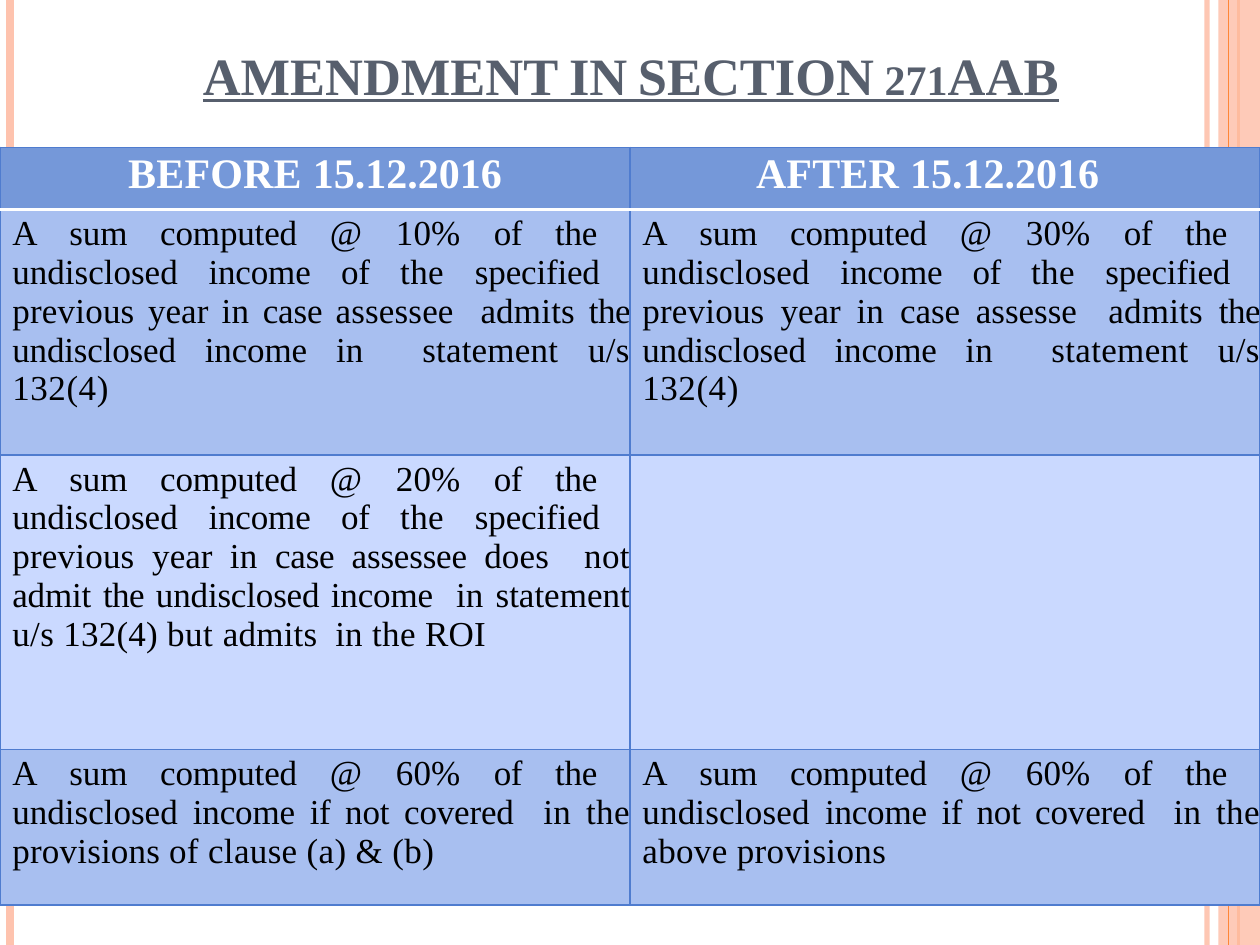
from lxml import etree
from pptx import Presentation
from pptx.dml.color import RGBColor
from pptx.enum.shapes import MSO_CONNECTOR, MSO_SHAPE
from pptx.enum.text import MSO_ANCHOR, PP_ALIGN
from pptx.oxml.ns import qn
from pptx.util import Cm, Pt

STRAIGHT, RECTANGLE = MSO_CONNECTOR.STRAIGHT, MSO_SHAPE.RECTANGLE
BOTTOM = MSO_ANCHOR.BOTTOM
LEFT, CENTER, JUSTIFY = PP_ALIGN.LEFT, PP_ALIGN.CENTER, PP_ALIGN.JUSTIFY

FONT = "Times New Roman"
WIDTH, HEIGHT = 25.4, 19.05
COLORS = {
    "peach": "FEC3AE", "orange": "FE8637", "title": "575F6D",
    "header": "7598D9", "dark band": "A8BFF0", "light band": "CAD9FF",
    "border": "4F7CCF", "white": "FFFFFF", "black": "000000",
}

TITLE = "AMENDMENT IN SECTION 271AAB"


# Text pieces with their letter spacing in points
def opening(rate, undisclosed_spacing=0):
    return [("A ", 0.2), ("sum computed ", -0.1), ("@ ", 0.2), (rate + " ", 0.1),
            ("of ", -0.3), ("the  ", -0.1), ("undisclosed ", undisclosed_spacing),
            ("income ", -0.1)]


SPECIFIED_YEAR = [("of ", -0.2), ("the ", 0.2), ("specified  ", -0.1),
                  ("previous ", 0.1), ("year ", 0), ("in ", 0.1)]
NOT_COVERED = [("if ", -0.3), ("not covered  ", -0.1), ("in ", 0.1)]
ADMITS_INCOME = [("admits ", 0.1), ("the ", -0.3), ("undisclosed income ", -0.1)]

HEADERS = [
    ([("BEFORE ", 0.1), ("15.12.2016", 0)], CENTER, 0),
    ([("AFTER ", 0.1), ("15.12.2016", 0)], LEFT, 2.54),
]
RULES = [
    [opening("10%") + SPECIFIED_YEAR + [("case ", -0.1), ("assessee  ", 0.1)]
     + ADMITS_INCOME + [("in  statement ", 0.1), ("u/s ", 0.2), ("132(4)", 0.3)],
     opening("30%", 0.1) + SPECIFIED_YEAR + [("case assesse  ", 0)]
     + ADMITS_INCOME + [("in  ", 0.1), ("statement u/s ", 0.2), ("132(4)", 0.3)]],
    [opening("20%") + SPECIFIED_YEAR
     + [("case assessee ", -0.1), ("does  ", 0.1), ("not ", 0.2), ("admit ", -0.1),
        ("the ", -0.3), ("undisclosed income  ", -0.1), ("in ", 0.1),
        ("statement ", 0), ("u/s ", 0.2), ("132(4) ", 0.1), ("but ", 0.3),
        ("admits  in ", 0.1), ("the ", 0.2), ("ROI", 0.1)],
     []],
    [opening("60%") + NOT_COVERED
     + [("the ", 0.2), ("provisions of ", 0.1), ("clause (a) & (b)", 0.2)],
     opening("60%", 0.1) + NOT_COVERED + [("the above provisions", 0.2)]],
]
ROW_HEIGHTS = [1.25, 4.95, 5.94, 3.13]
SPACE_BEFORE = [2.2, 2.5, 2.7, 2.9]
BANDS = ["header", "dark band", "light band", "dark band"]


def rgb(name):
    return RGBColor.from_string(COLORS[name])


def set_alpha(element, percent):
    color = element.find(".//" + qn("a:srgbClr"))
    etree.SubElement(color, qn("a:alpha"), val=str(percent * 1000))


def add_stripe(shapes, x, color, width, alpha=100):
    line = shapes.add_connector(STRAIGHT, Cm(x), 0, Cm(x), Cm(HEIGHT))
    line.line.color.rgb = rgb(color)
    line.line.width = Pt(width)
    properties = line._element.spPr
    set_alpha(properties, alpha)
    etree.SubElement(properties, qn("a:effectLst"))


def set_border(cell, side, color, width):
    line = etree.SubElement(cell._tc.get_or_add_tcPr(), qn("a:ln" + side),
                            w=str(Pt(width)))
    fill = etree.SubElement(line, qn("a:solidFill"))
    etree.SubElement(fill, qn("a:srgbClr"), val=COLORS[color])


def write_paragraph(paragraph, pieces, size, color, bold, align, indent, before):
    paragraph.alignment = align
    paragraph.space_before = Pt(before)
    paragraph._p.get_or_add_pPr().set("marL", str(Cm(indent)))
    for text, spacing in pieces:
        run = paragraph.add_run()
        run.text = text
        run.font.name = FONT
        run.font.size = Pt(size)
        run.font.bold = bold
        run.font.color.rgb = rgb(color)
        run._r.get_or_add_rPr().set("spc", str(round(spacing * 100)))


def fill_cell(cell, row, pieces, size, color, bold, align, indent):
    cell.margin_left = cell.margin_right = cell.margin_bottom = 0
    cell.margin_top = Cm(0.1 if row else 0.08)
    white_edge = {0: "B", 1: "T"}.get(row)
    for side in "LRTB":
        if side == white_edge:
            set_border(cell, side, "white", 2)
        else:
            set_border(cell, side, "border", 1)
    cell.fill.solid()
    cell.fill.fore_color.rgb = rgb(BANDS[row])
    write_paragraph(cell.text_frame.paragraphs[0], pieces, size, color, bold,
                    align, indent, SPACE_BEFORE[row])


presentation = Presentation()
presentation.slide_width, presentation.slide_height = Cm(WIDTH), Cm(HEIGHT)
slide = presentation.slides.add_slide(presentation.slide_layouts[6])
shapes = slide.shapes

# Side stripes
add_stripe(shapes, 24.33, "peach", 3, 93)
add_stripe(shapes, 0.2, "peach", 4.5)
add_stripe(shapes, 24.97, "orange", 1.5)
side_band = shapes.add_shape(RECTANGLE, Cm(24.56), 0, Cm(0.84), Cm(HEIGHT))
side_band.shadow.inherit = False
side_band.fill.solid()
side_band.fill.fore_color.rgb = rgb("peach")
set_alpha(side_band._element.spPr, 87)
side_band.line.fill.background()
add_stripe(shapes, 24.77, "orange", 0.75)

# Comparison table
table = shapes.add_table(len(ROW_HEIGHTS), len(HEADERS), 0, Cm(2.97),
                         Cm(WIDTH), Cm(sum(ROW_HEIGHTS))).table
for row, height in enumerate(ROW_HEIGHTS):
    table.rows[row].height = Cm(height)
for column, (pieces, align, indent) in enumerate(HEADERS):
    fill_cell(table.cell(0, column), 0, pieces, 24, "white", True, align, indent)
for row, rules in enumerate(RULES, start=1):
    for column, pieces in enumerate(rules):
        fill_cell(table.cell(row, column), row, pieces, 20, "black", False,
                  JUSTIFY, 0.25)

# Title
title = shapes.add_textbox(0, Cm(0.89), Cm(WIDTH), Cm(1.24))
frame = title.text_frame
frame.word_wrap = True
frame.vertical_anchor = BOTTOM
frame.margin_left = frame.margin_right = frame.margin_bottom = 0
frame.margin_top = Cm(0.03)
write_paragraph(frame.paragraphs[0], [(TITLE, 0)], 30, "title", True, CENTER, 0.03, 1)
title_run = frame.paragraphs[0].runs[0]
title_run.font.underline = True
title_run._r.get_or_add_rPr().set("cap", "small")

presentation.save("out.pptx")
